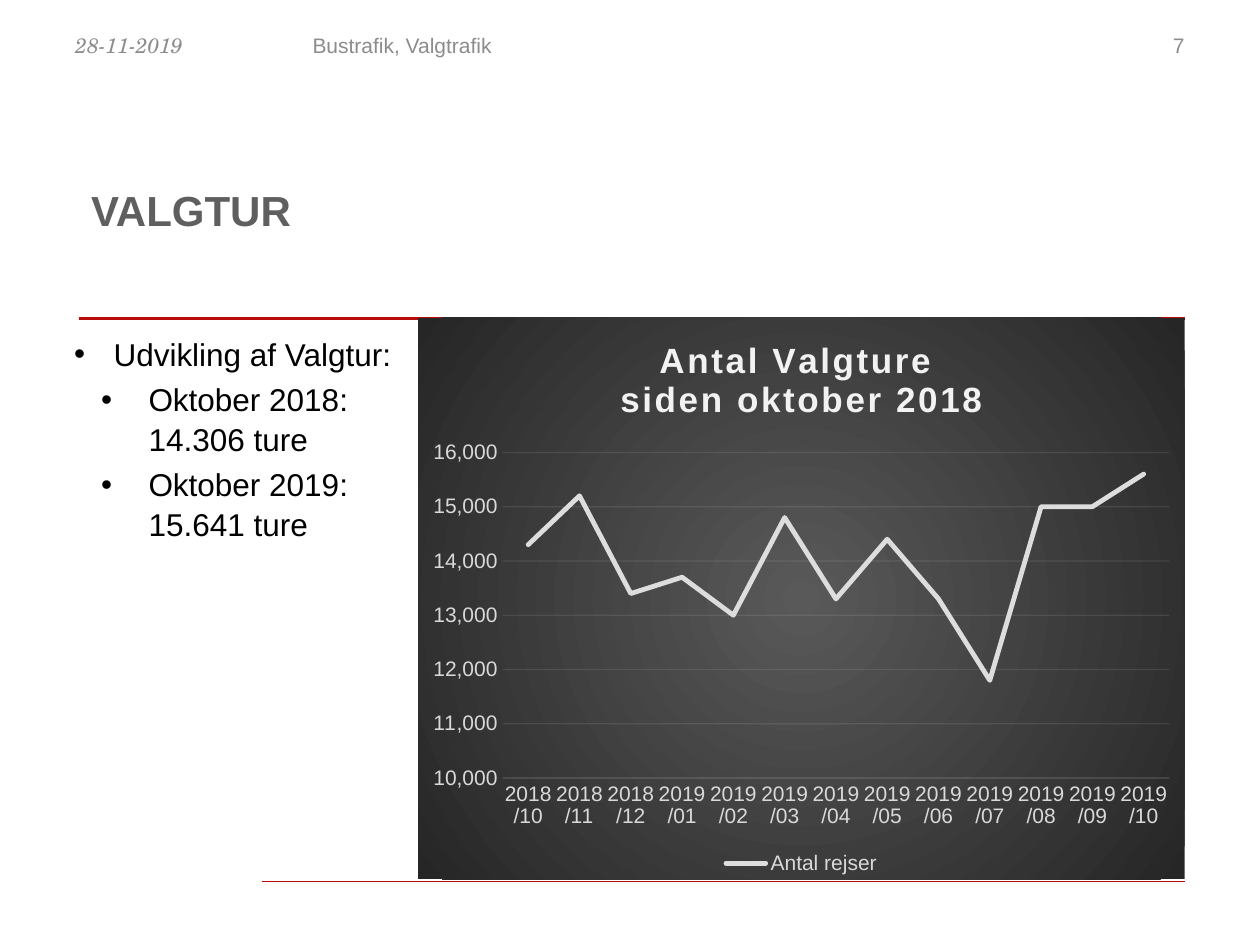
from lxml.etree import SubElement
from pptx import Presentation
from pptx.chart.data import CategoryChartData
from pptx.dml.color import RGBColor
from pptx.enum.chart import XL_CHART_TYPE, XL_LEGEND_POSITION, XL_TICK_MARK
from pptx.enum.shapes import MSO_CONNECTOR
from pptx.enum.text import PP_ALIGN
from pptx.oxml import parse_xml
from pptx.oxml.ns import nsdecls, qn
from pptx.util import Pt

COLORS = {
    "rule": "B70C0A", "title": "5F5F5F", "header": "8C8C8C", "body": "000000",
    "series": "DDDDDD", "label": "D9D9D9", "light": "F2F2F2",
    "center": "595959", "edge": "262626",
}


def color(name):
    return RGBColor.from_string(COLORS[name])


def style_font(font, size, color_name, name="Arial"):
    font.size = Pt(size)
    font.name = name
    font.color.rgb = color(color_name)


presentation = Presentation()
presentation.slide_width, presentation.slide_height = Pt(720), Pt(540)
slide = presentation.slides.add_slide(presentation.slide_layouts[6])

# Red rules above and below the content
for left, top, width in [(45, 182, 1.5), (150, 503.5, 0.5)]:
    rule = slide.shapes.add_connector(
        MSO_CONNECTOR.STRAIGHT, Pt(left), Pt(top), Pt(677), Pt(top))
    rule.line.color.rgb = color("rule")
    rule.line.width = Pt(width)
    SubElement(rule.element.spPr, qn("a:effectLst"))

# Title and header fields
single_lines = [
    ("VALGTUR", 45, 102, 632, 79, 24, "title", "Arial", PP_ALIGN.LEFT),
    ("28-11-2019", 36, 15, 168, 29, 12, "header", "TeX Gyre Schola", PP_ALIGN.LEFT),
    ("Bustrafik, Valgtrafik", 171.5, 15, 228, 29, 12, "header", "Arial", PP_ALIGN.LEFT),
    ("7", 516, 15, 168, 29, 12, "header", "Arial", PP_ALIGN.RIGHT),
]
for text, left, top, width, height, size, color_name, font_name, alignment in single_lines:
    shape = slide.shapes.add_textbox(Pt(left), Pt(top), Pt(width), Pt(height))
    shape.text_frame.word_wrap = True
    paragraph = shape.text_frame.paragraphs[0]
    paragraph.alignment = alignment
    run = paragraph.add_run()
    run.text = text
    style_font(run.font, size, color_name, font_name)
    run.font.bold = color_name == "title"
    run.font.italic = font_name != "Arial"

# Bullet list
body = slide.shapes.add_textbox(Pt(35.3), Pt(187), Pt(294.5), Pt(308))
body.text_frame.word_wrap = True
bullets = [
    (0, ["Udvikling af Valgtur:"]),
    (1, ["Oktober 2018: ", "14.306 ture"]),
    (1, ["Oktober 2019: ", "15.641 ture"]),
]
indents = [(22.5, -22.5), (42.5, -27)]
for index, (level, lines) in enumerate(bullets):
    paragraph = body.text_frame.paragraphs[0] if index == 0 else body.text_frame.add_paragraph()
    margin, indent = indents[level]
    properties = paragraph._p.get_or_add_pPr()
    properties.set("marL", str(Pt(margin)))
    properties.set("indent", str(Pt(indent)))
    SubElement(properties, qn("a:buFont"), typeface="Arial")
    SubElement(properties, qn("a:buChar"), char="•")
    paragraph.level = level
    paragraph.line_spacing = 1.04
    paragraph.space_before = Pt(3.6 if index else 0)
    for line_index, line in enumerate(lines):
        if line_index:
            paragraph.add_line_break()
        run = paragraph.add_run()
        run.text = line
        style_font(run.font, 18, "body")

# Line chart of monthly trips
chart_data = CategoryChartData(number_format="#,##0")
chart_data.categories = (
    [f"2018/{month}" for month in range(10, 13)]
    + [f"2019/{month:02}" for month in range(1, 11)])
chart_data.add_series("Antal rejser", [
    14300, 15200, 13400, 13700, 13000, 14800, 13300,
    14400, 13300, 11800, 15000, 15000, 15600])
chart = slide.shapes.add_chart(
    XL_CHART_TYPE.LINE, Pt(239), Pt(181.5), Pt(438), Pt(321), chart_data).chart
style_font(chart.font, 12, "label")

series = chart.plots[0].series[0]
chart.plots[0].vary_by_categories = False
series.smooth = False
series.format.line.color.rgb = color("series")
series.format.line.width = Pt(2.75)
series.format.line._get_or_add_ln().set("cap", "rnd")

# Chart title and legend
chart.has_title = True
title_frame = chart.chart_title.text_frame
chart.chart_title.include_in_layout = False
for index, text in enumerate(["Antal Valgture ", "siden oktober 2018"]):
    paragraph = title_frame.paragraphs[0] if index == 0 else title_frame.add_paragraph()
    run = paragraph.add_run()
    run.text = text
    style_font(run.font, 20, "light")
    run.font.bold = True
    run._r.get_or_add_rPr().set("spc", "140")
chart.has_legend = True
chart.legend.position = XL_LEGEND_POSITION.BOTTOM
chart.legend.include_in_layout = False
style_font(chart.legend.font, 12, "label")

# Axes with faint lines
category_axis, value_axis = chart.category_axis, chart.value_axis
for axis in (category_axis, value_axis):
    axis.major_tick_mark = axis.minor_tick_mark = XL_TICK_MARK.NONE
    style_font(axis.tick_labels.font, 12, "label")
value_axis.minimum_scale, value_axis.maximum_scale = 10000, 16000
value_axis.major_unit = 1000
value_axis.tick_labels.number_format = "#,##0"
value_axis.tick_labels.number_format_is_linked = False
value_axis.format.line.fill.background()
for line in (category_axis.format.line, value_axis.major_gridlines.format.line):
    line.color.rgb = color("light")
    line.width = Pt(0.75)
    line_color = line._get_or_add_ln().find(".//" + qn("a:srgbClr"))
    SubElement(line_color, qn("a:alpha"), val="10000")

# Plot position and radial chart background
plot_area = chart._chartSpace.chart.plotArea
for old_layout in plot_area.findall(qn("c:layout")):
    plot_area.remove(old_layout)
plot_area.insert(0, parse_xml(
    f'<c:layout {nsdecls("c")}><c:manualLayout><c:layoutTarget val="inner"/>'
    '<c:xMode val="edge"/><c:yMode val="edge"/><c:x val="0.11"/><c:y val="0.24"/>'
    '<c:w val="0.87"/><c:h val="0.58"/></c:manualLayout></c:layout>'))
chart._chartSpace.chart.addnext(parse_xml(
    f'<c:spPr {nsdecls("c", "a")}><a:gradFill><a:gsLst>'
    f'<a:gs pos="0"><a:srgbClr val="{COLORS["center"]}"/></a:gs>'
    f'<a:gs pos="100000"><a:srgbClr val="{COLORS["edge"]}"/></a:gs></a:gsLst>'
    '<a:path path="circle"><a:fillToRect l="50000" t="50000" r="50000" b="50000"/></a:path>'
    '</a:gradFill><a:ln><a:noFill/></a:ln></c:spPr>'))

presentation.save("out.pptx")
